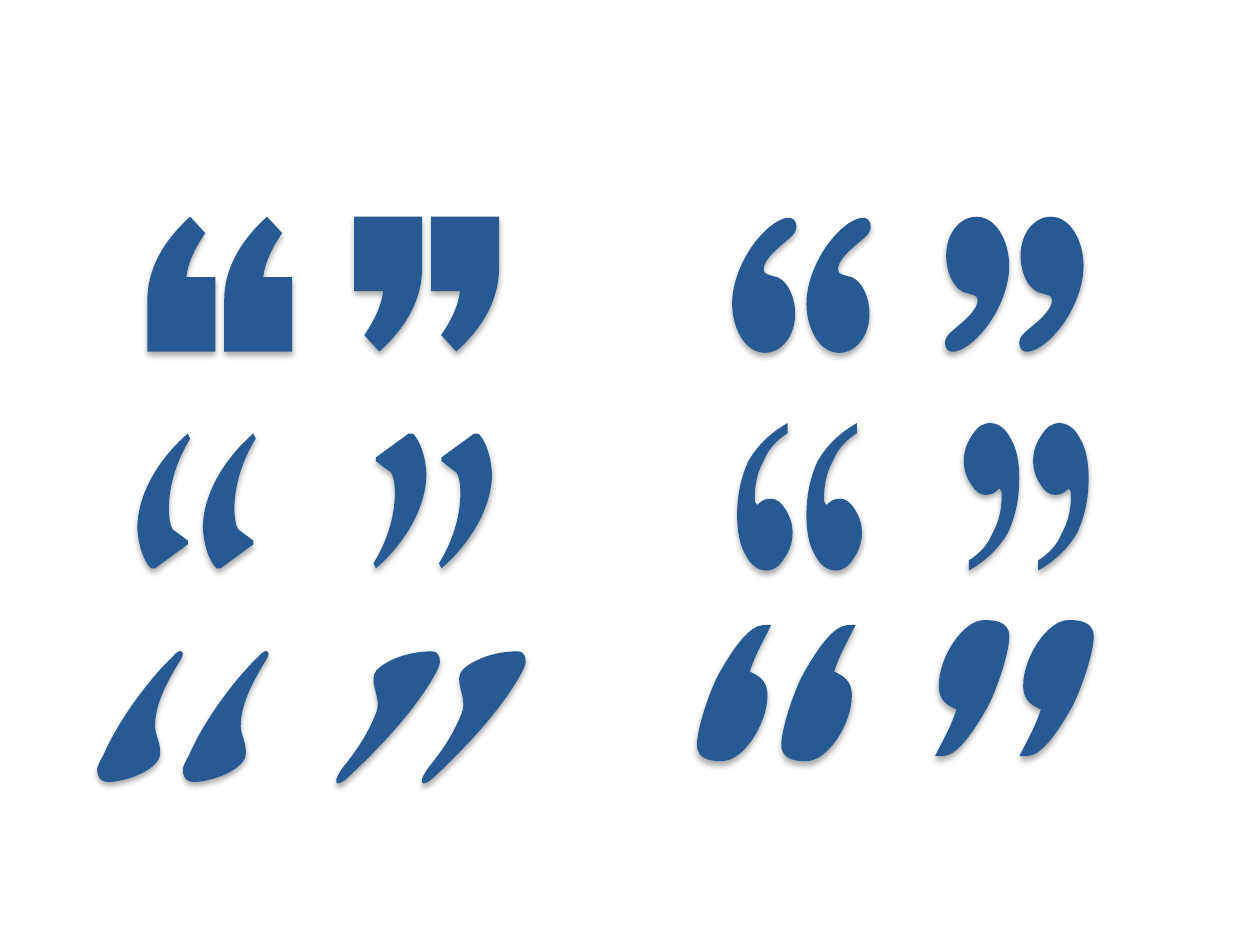
from dataclasses import dataclass

from lxml.etree import Element, SubElement
from pptx import Presentation
from pptx.dml.color import RGBColor
from pptx.oxml.ns import qn
from pptx.util import Cm, Pt


@dataclass(frozen=True)
class Theme:
    mark: RGBColor = RGBColor(0x27, 0x5A, 0x93)
    shadow: str = "000000"
    shadow_alpha: int = 32000
    shadow_blur: int = Pt(3.5)
    shadow_distance: int = Pt(2.2)


@dataclass(frozen=True)
class Glyph:
    """One mark: a start point, then lines (x, y) and cubic curves (6 numbers)."""
    width: int
    height: int
    pitch: int
    outline: tuple


THEME = Theme()
UNIT = Cm(0.0254)  # one glyph unit

BLOCK = Glyph(54, 107, 61, (
    (54, 107), (0, 107), (0, 67), (0, 42, 12, 20, 34, 0), (46, 13),
    (37, 26, 32, 38, 31, 48), (54, 48)))
ROUND = Glyph(51, 108, 59, (
    (20, 18), (30, 6, 38, 2, 43, 1), (48, 0, 51, 3, 51, 8),
    (51, 14, 44, 18, 41, 21), (31, 29, 25, 36, 25, 42),
    (25, 46, 30, 46, 32, 47), (43, 48, 50, 63, 50, 77),
    (50, 95, 39, 108, 26, 108), (10, 108, 0, 88, 0, 69),
    (0, 50, 10, 30, 20, 18)))
BLADE = Glyph(42, 107, 52, (
    (42, 4), (32, 20, 25, 40, 25, 60), (25, 66, 26, 73, 28, 76),
    (40, 85), (40, 88), (14, 107), (11, 107),
    (8, 105, 1, 94, 0, 75), (0, 50, 15, 22, 40, 0)))
THIN = Glyph(44, 117, 55, (
    (40, 0), (40, 8), (32, 13, 25, 20, 21, 30), (16, 39, 14, 49, 14, 59),
    (14, 62, 14, 63, 15, 64), (16, 65), (17, 64), (20, 61, 23, 60, 27, 60),
    (31, 60, 35, 63, 38, 68), (42, 74, 44, 80, 44, 87),
    (44, 96, 41, 102, 37, 108), (33, 114, 29, 117, 23, 117),
    (17, 117, 11, 113, 7, 105), (2, 97, 0, 86, 0, 73),
    (0, 57, 3, 43, 9, 30), (16, 18, 26, 8, 40, 0)))
DROP_OPEN = Glyph(67, 105, 68, (
    (0, 94), (0, 93, 2, 88, 5, 83), (18, 53, 44, 20, 60, 5),
    (63, 1, 66, 0, 67, 1), (70, 2, 66, 8, 64, 11),
    (57, 23, 47, 40, 46, 57), (45, 67, 50, 70, 50, 82),
    (50, 91, 34, 101, 15, 104), (5, 106, 0, 103, 0, 95)))
DROP_CLOSE = Glyph(83, 106, 68, (
    (83, 10), (83, 12, 80, 18, 77, 23), (58, 55, 26, 86, 10, 101),
    (6, 105, 1, 107, 1, 105), (0, 102, 2, 99, 6, 93),
    (16, 81, 27, 65, 33, 48), (36, 38, 28, 27, 31, 19),
    (33, 12, 52, 2, 72, 1), (80, 0, 83, 2, 83, 9)))
LEAF = Glyph(59, 108, 67, (
    (20, 108), (14, 108, 0, 108, 0, 95), (0, 81, 12, 47, 19, 36),
    (42, -4, 51, 0, 59, 0), (53, 12, 46, 24, 42, 37),
    (48, 40, 56, 43, 56, 56), (56, 78, 37, 108, 20, 108)))

# Glyph, left and top in cm, turned half round for a closing pair
PAIRS = (
    (BLOCK, 2.97, 4.37, False), (BLOCK, 7.14, 4.37, True),
    (ROUND, 14.76, 4.37, False), (ROUND, 19.05, 4.37, True),
    (BLADE, 2.77, 8.74, False), (BLADE, 7.53, 8.74, True),
    (THIN, 14.86, 8.53, False), (THIN, 19.43, 8.53, True),
    (DROP_OPEN, 1.96, 13.11, False), (DROP_CLOSE, 6.76, 13.11, False),
    (LEAF, 14.05, 12.6, False), (LEAF, 18.85, 12.5, True),
)


def placed_segments(glyph, turned, shift):
    """Segments as lists of points; the last point of each is its end."""
    segments = []
    for numbers in glyph.outline:
        points = list(zip(numbers[::2], numbers[1::2]))
        if turned:
            points = [(glyph.width - x, glyph.height - y) for x, y in points]
        segments.append([(x + shift, y) for x, y in points])
    return segments


def bend_lines(shape, segments, origin):
    """Turn the straight pieces that have control points into cubic curves."""
    lines = list(shape.element.iter(qn("a:lnTo")))
    for line, segment in zip(lines, segments):
        if len(segment) == 1:
            continue
        line.tag = qn("a:cubicBezTo")
        for index, (x, y) in enumerate(segment[:-1]):
            line.insert(index, Element(qn("a:pt"), x=str(x - origin[0]), y=str(y - origin[1])))


def add_shadow(shape):
    shape.shadow.inherit = False
    effects = shape.element.spPr.find(qn("a:effectLst"))
    shadow = SubElement(effects, qn("a:outerShdw"), blurRad=str(THEME.shadow_blur),
                        dist=str(THEME.shadow_distance), dir="5400000",
                        algn="tl", rotWithShape="0")
    color = SubElement(shadow, qn("a:srgbClr"), val=THEME.shadow)
    SubElement(color, qn("a:alpha"), val=str(THEME.shadow_alpha))


def add_quote_pair(slide, glyph, left, top, turned):
    """Two equal marks in one shape, placed from the given corner."""
    marks = [placed_segments(glyph, turned, shift) for shift in (0, glyph.pitch)]
    ends = [[segment[-1] for segment in mark] for mark in marks]
    builder = slide.shapes.build_freeform(*ends[0][0], scale=UNIT)
    builder.add_line_segments(ends[0][1:], close=True)
    builder.move_to(*ends[1][0])
    builder.add_line_segments(ends[1][1:], close=True)
    shape = builder.convert_to_shape(left, top)
    origin = [min(point[axis] for point in ends[0]) for axis in (0, 1)]
    bend_lines(shape, marks[0][1:] + marks[1][1:], origin)
    shape.fill.solid()
    shape.fill.fore_color.rgb = THEME.mark
    shape.line.fill.background()
    add_shadow(shape)


def main():
    presentation = Presentation()
    presentation.slide_width, presentation.slide_height = Cm(25.4), Cm(19.05)
    slide = presentation.slides.add_slide(presentation.slide_layouts[6])
    for glyph, left, top, turned in PAIRS:
        add_quote_pair(slide, glyph, Cm(left), Cm(top), turned)
    presentation.save("out.pptx")


if __name__ == "__main__":
    main()
